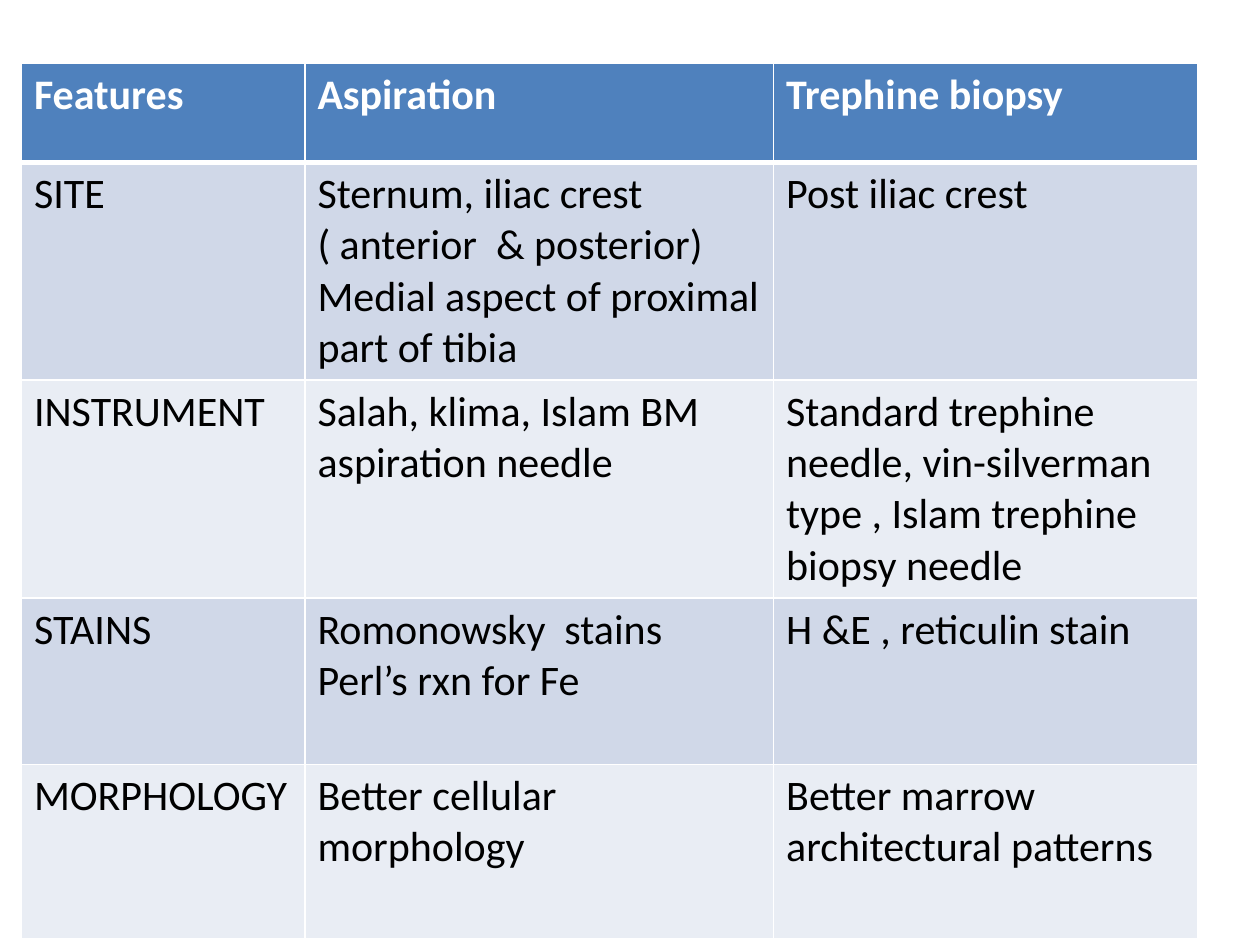
"""Build a slide comparing marrow aspiration with trephine biopsy."""
from dataclasses import dataclass

from lxml.etree import SubElement
from pptx import Presentation
from pptx.dml.color import RGBColor as Rgb
from pptx.oxml.ns import qn
from pptx.util import Inches, Pt


@dataclass(frozen=True)
class Theme:
    font: str = "Calibri"
    size: int = 24
    header_fill: str = "4F81BD"
    header_text: str = "FFFFFF"
    body_text: str = "000000"
    bands: tuple[str, str] = ("D0D8E8", "E9EDF4")
    border: str = "FFFFFF"
    thin: int = 1
    thick: int = 3


@dataclass(frozen=True)
class Feature:
    """One table row; newlines split paragraphs and vertical tabs split lines."""
    height: float
    name: str
    aspiration: str
    trephine: str


THEME = Theme()
LEFT, TOP = 0.17, 0.5
COLUMN_WIDTHS = (2.25, 3.72, 3.37)
FEATURES = (
    Feature(0.79, "Features", "Aspiration", "Trephine biopsy"),
    Feature(1.72, "SITE",
            "Sternum, iliac crest\v( anterior  & posterior)\n"
            "Medial aspect of proximal part of tibia",
            "Post iliac crest"),
    Feature(1.73, "INSTRUMENT", "Salah, klima, Islam BM aspiration needle",
            "Standard trephine needle, vin-silverman type , "
            "Islam trephine biopsy needle"),
    Feature(1.32, "STAINS", "Romonowsky  stains\nPerl’s rxn for Fe",
            "H &E , reticulin stain"),
    Feature(1.38, "MORPHOLOGY", "Better cellular morphology",
            "Better marrow architectural patterns"),
)


def write_text(cell, text: str, color: str, bold: bool) -> None:
    """Add each paragraph and line of the text as its own run."""
    frame = cell.text_frame
    for index, passage in enumerate(text.split("\n")):
        para = frame.add_paragraph() if index else frame.paragraphs[0]
        for position, line in enumerate(passage.split("\v")):
            if position:
                para.add_line_break()
            span = para.add_run()
            span.text = line
            span.font.name = THEME.font
            span.font.size = Pt(THEME.size)
            span.font.bold = bold
            span.font.color.rgb = Rgb.from_string(color)


def draw_borders(cell, top: int, bottom: int) -> None:
    """Rule all four sides of a cell, with widths in points."""
    properties = cell._tc.get_or_add_tcPr()
    widths = {"L": THEME.thin, "R": THEME.thin, "T": top, "B": bottom}
    for side, width in widths.items():
        line = SubElement(properties, qn(f"a:ln{side}"), w=str(Pt(width)))
        fill = SubElement(line, qn("a:solidFill"))
        SubElement(fill, qn("a:srgbClr"), val=THEME.border)


def draw_row(table, index: int, feature: Feature) -> None:
    """Fill one row, styling the first as the header."""
    header = index == 0
    fill = THEME.header_fill if header else THEME.bands[(index - 1) % 2]
    color = THEME.header_text if header else THEME.body_text
    table.rows[index].height = Inches(feature.height)
    texts = (feature.name, feature.aspiration, feature.trephine)
    for column, text in enumerate(texts):
        cell = table.cell(index, column)
        draw_borders(cell, THEME.thick if index == 1 else THEME.thin,
                     THEME.thick if header else THEME.thin)
        cell.fill.solid()
        cell.fill.fore_color.rgb = Rgb.from_string(fill)
        write_text(cell, text, color, header)


def main() -> None:
    """Create the deck and save it."""
    deck = Presentation()
    deck.slide_width, deck.slide_height = Inches(10), Inches(7.5)
    page = deck.slides.add_slide(deck.slide_layouts[6])
    height = sum(feature.height for feature in FEATURES)
    table = page.shapes.add_table(
        len(FEATURES), len(COLUMN_WIDTHS), Inches(LEFT), Inches(TOP),
        Inches(sum(COLUMN_WIDTHS)), Inches(height)).table
    for column, width in zip(table.columns, COLUMN_WIDTHS):
        column.width = Inches(width)
    for index, feature in enumerate(FEATURES):
        draw_row(table, index, feature)
    deck.save("out.pptx")


if __name__ == "__main__":
    main()
